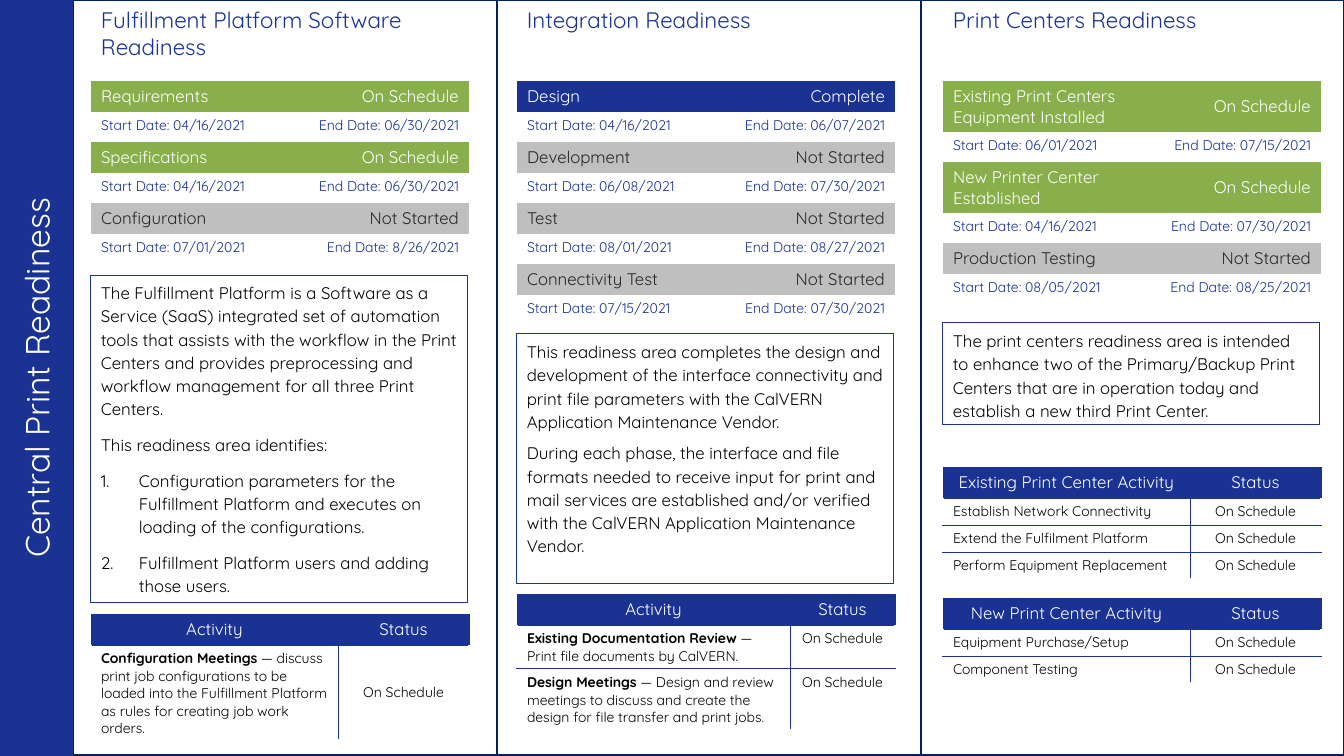
from lxml.etree import SubElement
from pptx import Presentation
from pptx.dml.color import RGBColor
from pptx.enum.shapes import MSO_SHAPE
from pptx.enum.text import MSO_ANCHOR, PP_ALIGN
from pptx.oxml import parse_xml
from pptx.oxml.ns import nsdecls, qn
from pptx.util import Emu, Pt

PX = 914400 / 100.8
W, H = 1344, 756
BAR_W = 73
COL_X, COL_STEP, COL_W = 91, 426, 378
FONT = "Quicksand"
PLAIN_TABLE = "{2D5ABB26-0587-4C30-8999-92F81FD0307C}"
COLORS = {"blue": "1A3292", "navy": "002060", "green": "88AF4B", "gray": "BFBFBF",
          "dark": "262626", "black": "000000", "white": "FFFFFF"}
STATUS = {"On Schedule": ("green", "white"), "Complete": ("blue", "white"),
          "Not Started": ("gray", "dark")}
LEFT, CENTER, RIGHT = PP_ALIGN.LEFT, PP_ALIGN.CENTER, PP_ALIGN.RIGHT


def px(n):
    return Emu(round(n * PX))


def rgb(name):
    return RGBColor.from_string(COLORS[name])


class Deck:
    def __init__(self):
        self.prs = Presentation()
        self.prs.slide_width, self.prs.slide_height = px(W), px(H)
        self.s = self.prs.slides.add_slide(self.prs.slide_layouts[6])

    def add_runs(self, p, runs, size, color, align=LEFT):
        """Fill a paragraph from a string or a list of (text, bold) runs."""
        p.alignment = align
        for text, bold in [(runs, False)] if isinstance(runs, str) else runs:
            r = p.add_run()
            r.text = text
            r.font.name, r.font.size, r.font.bold = FONT, Pt(size), bold
            r.font.color.rgb = rgb(color)

    def text(self, x, y, w, h, text, size, color, align=LEFT, rotation=0):
        sp = self.s.shapes.add_textbox(px(x), px(y), px(w), px(h))
        sp.rotation = rotation
        sp.text_frame.word_wrap = True
        self.add_runs(sp.text_frame.paragraphs[0], text, size, color, align)

    def rect(self, x, y, w, h, fill=None, line=None):
        sp = self.s.shapes.add_shape(MSO_SHAPE.RECTANGLE, px(x), px(y), px(w), px(h))
        sp.shadow.inherit = False
        for part, color in ((sp.fill, fill), (sp.line.fill, line)):
            if color:
                part.solid()
                part.fore_color.rgb = rgb(color)
            else:
                part.background()
        if line:
            sp.line.width = Pt(0.75)
        return sp

    def description(self, x, y, h, paragraphs, steps=()):
        """Outlined box with paragraphs of (text, space before) and numbered steps."""
        tf = self.rect(x, y, COL_W - 1, h, line="blue").text_frame
        tf.word_wrap, tf.vertical_anchor = True, MSO_ANCHOR.TOP
        items = [(t, sb, False) for t, sb in paragraphs] + [(t, 3, True) for t in steps]
        for i, (text, before, numbered) in enumerate(items):
            p = tf.add_paragraph() if i else tf.paragraphs[0]
            p.line_spacing, p.space_before, p.space_after = 1.15, Pt(before), Pt(6)
            if numbered:
                pPr = p._p.get_or_add_pPr()
                pPr.set("marL", str(px(38)))
                pPr.set("indent", str(-px(38)))
                SubElement(pPr, qn("a:buAutoNum"), type="arabicPeriod")
            self.add_runs(p, text, 12, "black")

    def table(self, x, y, widths, heights):
        frame = self.s.shapes.add_table(len(heights), len(widths), px(x), px(y),
                                        px(sum(widths)), px(sum(heights)))
        t = frame.table
        t._tbl.tblPr[0].text = PLAIN_TABLE
        t.first_row = t.horz_banding = False
        for col, w in zip(t.columns, widths):
            col.width = px(w)
        for row, h in zip(t.rows, heights):
            row.height = px(h)
        for cell in t.iter_cells():
            cell.fill.background()
        return t

    def cell(self, cell, runs, size, color, align=LEFT, fill=None, middle=False):
        if fill:
            cell.fill.solid()
            cell.fill.fore_color.rgb = rgb(fill)
        if middle:
            cell.vertical_anchor = MSO_ANCHOR.MIDDLE
        self.add_runs(cell.text_frame.paragraphs[0], runs, size, color, align)

    def borders(self, cell, **sides):
        """Set cell borders, each side (L, R, T, B) as (color, points)."""
        tcPr = cell._tc.get_or_add_tcPr()
        for i, side in enumerate("LRTB"):
            color, width = sides[side]
            tcPr.insert(i, parse_xml(
                f'<a:ln{side} {nsdecls("a")} w="{Pt(width)}"><a:solidFill>'
                f'<a:srgbClr val="{COLORS[color]}"/></a:solidFill></a:ln{side}>'))

    def frame(self):
        """Three outlined columns beside the title bar."""
        t = self.table(BAR_W, 0, [424, 424, 423], [755])
        for cell in t.iter_cells():
            self.borders(cell, **dict.fromkeys("LRTB", ("navy", 1)))

    def phase(self, x, y, name, status, start, end, head_h=31):
        """Status row with its dates; returns the y below it."""
        heights = [head_h, 30]
        t = self.table(x, y, [COL_W // 2] * 2, heights)
        fill, color = STATUS[status]
        self.cell(t.cell(0, 0), name, 12, color, fill=fill)
        self.cell(t.cell(0, 1), status, 12, color, RIGHT, fill, middle=True)
        self.cell(t.cell(1, 0), f"Start Date: {start}", 10, "blue")
        self.cell(t.cell(1, 1), f"End Date: {end}", 10, "blue", RIGHT)
        return y + sum(heights)

    def activities(self, x, y, title, rows, name_w=247, row_h=27, middle=False):
        t = self.table(x, y, [name_w, COL_W - name_w], [31] + [row_h] * len(rows))
        thin, blank = ("blue", 0.5), ("white", 1)
        for c, text in enumerate((title, "Status")):
            self.cell(t.cell(0, c), text, 12, "white", CENTER, "blue")
            self.borders(t.cell(0, c), **dict.fromkeys("LRTB", thin))
        for i, name in enumerate(rows, 1):
            self.cell(t.cell(i, 0), name, 10, "black")
            self.cell(t.cell(i, 1), "On Schedule", 10, "black", CENTER, middle=middle)
            bottom = blank if i == len(rows) else thin
            self.borders(t.cell(i, 0), L=blank, R=thin, T=thin, B=bottom)
            self.borders(t.cell(i, 1), L=thin, R=blank, T=thin, B=bottom)


AREAS = [
    ("Fulfillment Platform Software Readiness", [
        ("Requirements", "On Schedule", "04/16/2021", "06/30/2021"),
        ("Specifications", "On Schedule", "04/16/2021", "06/30/2021"),
        ("Configuration", "Not Started", "07/01/2021", "8/26/2021")]),
    ("Integration Readiness", [
        ("Design", "Complete", "04/16/2021", "06/07/2021"),
        ("Development", "Not Started", "06/08/2021", "07/30/2021"),
        ("Test", "Not Started", "08/01/2021", "08/27/2021"),
        ("Connectivity Test", "Not Started", "07/15/2021", "07/30/2021")]),
    ("Print Centers Readiness", [
        ("Existing Print Centers Equipment Installed", "On Schedule",
         "06/01/2021", "07/15/2021", 51),
        ("New Printer Center Established", "On Schedule", "04/16/2021", "07/30/2021", 51),
        ("Production Testing", "Not Started", "08/05/2021", "08/25/2021")]),
]


def main():
    d = Deck()
    d.frame()
    d.rect(0, 0, BAR_W, H, fill="blue")
    d.text(-342, 353, H, 50, "Central Print Readiness", 24, "white", CENTER, 270)

    xs = [COL_X + COL_STEP * i for i in range(len(AREAS))]
    for x, (title, phases) in zip(xs, AREAS):
        d.text(x, 1, COL_W, 37, title, 16, "blue")
        y = 81
        for phase in phases:
            y = d.phase(x, y, *phase)
    software, integration, centers = xs

    d.description(software, 275, 328, [
        ("The Fulfillment Platform is a Software as a Service (SaaS) integrated set of "
         "automation tools that assists with the workflow in the Print Centers and provides "
         "preprocessing and workflow management for all three Print Centers.", 3),
        ("This readiness area identifies:", 3),
    ], ["Configuration parameters for the Fulfillment Platform and executes on loading of "
        "the configurations.",
        "Fulfillment Platform users and adding those users."])
    d.description(integration, 334, 250, [
        ("This readiness area completes the design and development of the interface "
         "connectivity and print file parameters with the CalVERN Application Maintenance "
         "Vendor.", 3),
        ("During each phase, the interface and file formats needed to receive input for print "
         "and mail services are established and/or verified with the CalVERN Application "
         "Maintenance Vendor.", 0)])
    d.description(centers, 323, 102, [
        ("The print centers readiness area is intended to enhance two of the Primary/Backup "
         "Print Centers that are in operation today and establish a new third Print Center.",
         3)])

    d.activities(software, 614, "Activity", [
        [("Configuration Meetings", True),
         (" — discuss print job configurations to be loaded into the Fulfillment Platform as "
          "rules for creating job work orders.", False)]], row_h=95, middle=True)
    d.activities(integration, 594, "Activity", [
        [("Existing Documentation Review", True),
         (" —Print file documents by CalVERN.", False)],
        [("Design Meetings", True),
         (" — Design and review meetings to discuss and create the design for file transfer "
          "and print jobs.", False)]], name_w=273, row_h=43)
    d.activities(centers, 467, "Existing Print Center Activity", [
        "Establish Network Connectivity", "Extend the Fulfilment Platform",
        "Perform Equipment Replacement"])
    d.activities(centers, 598, "New Print Center Activity", [
        "Equipment Purchase/Setup", "Component Testing"])
    d.prs.save("out.pptx")


if __name__ == "__main__":
    main()
